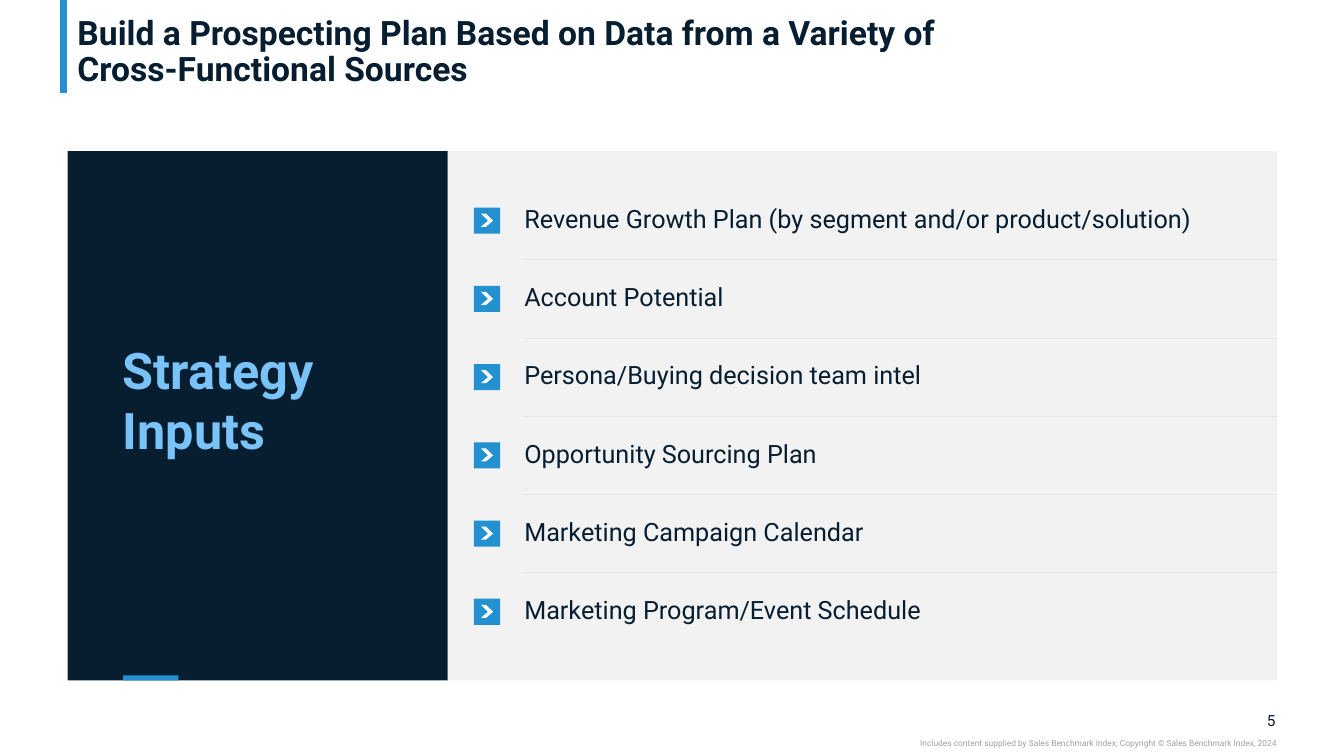
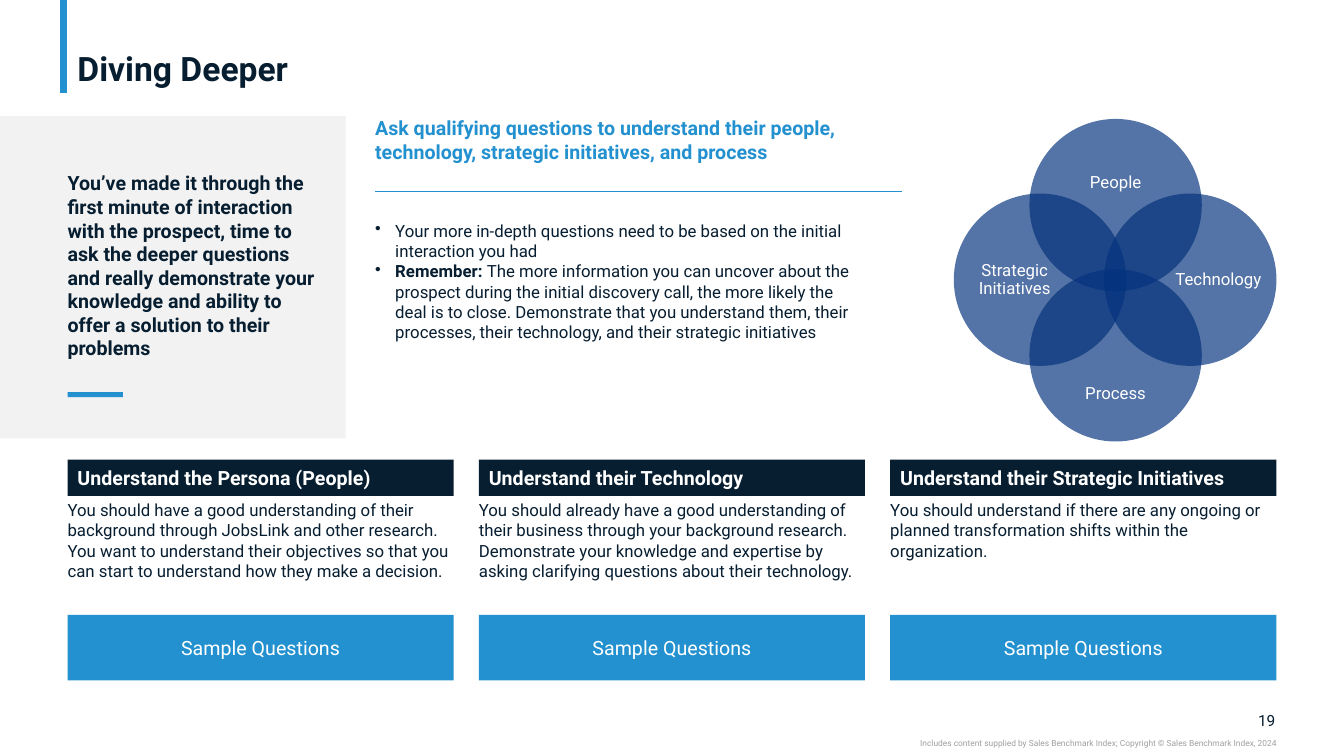
import lxml.etree
import pptx
import pptx.dml.color
import pptx.enum.shapes
import pptx.enum.text
import pptx.oxml.ns
import pptx.util

Inches = pptx.util.Inches
Pt = pptx.util.Pt
Align = pptx.enum.text.PP_ALIGN
Anchor = pptx.enum.text.MSO_ANCHOR
Shape = pptx.enum.shapes.MSO_SHAPE
qn = pptx.oxml.ns.qn

COLORS = {
    "navy": "071E31",
    "blue": "2391CF",
    "sky": "7AC3F8",
    "royal": "03327C",
    "panel": "F2F2F2",
    "rule": "E7E6E6",
    "muted": "A0A0A0",
    "white": "FFFFFF",
}
FONT = "Roboto"
LEFT = 0.67
RIGHT = 12.66
COPYRIGHT = (
    "Includes content supplied by Sales Benchmark Index; "
    "Copyright © Sales Benchmark Index, 2024"
)


def rgb(name):
    return pptx.dml.color.RGBColor.from_string(COLORS[name])


class Deck:
    def __init__(self):
        self.presentation = pptx.Presentation()
        self.presentation.slide_width = Inches(13.33)
        self.presentation.slide_height = Inches(7.5)
        self.page = None

    def add_page(self, title, number):
        layout = self.presentation.slide_layouts[6]
        self.page = self.presentation.slides.add_slide(layout)
        self.line(0.63, 0, 0.63, 0.92, "blue", 5)
        self.text(title, LEFT, 0.04, 11.99, 0.84, 24, bold=True,
                  anchor=Anchor.BOTTOM, inset=0.1, spacing=0.9)
        self.text(number, 12.32, 7.05, 0.33, 0.19, 11,
                  align=Align.RIGHT, anchor=Anchor.MIDDLE)
        self.text(COPYRIGHT, 7.5, 7.32, 5.16, 0.1, 6, "muted",
                  align=Align.RIGHT)

    def line(self, x1, y1, x2, y2, color, width):
        connector = self.page.shapes.add_connector(
            pptx.enum.shapes.MSO_CONNECTOR.STRAIGHT,
            Inches(x1), Inches(y1), Inches(x2), Inches(y2))
        connector.line.color.rgb = rgb(color)
        connector.line.width = Pt(width)
        lxml.etree.SubElement(connector._element.spPr, qn("a:effectLst"))

    def paint(self, shape, color):
        shape.shadow.inherit = False
        shape.fill.solid()
        shape.fill.fore_color.rgb = rgb(color)
        shape.line.fill.background()

    def shape(self, left, top, width, height, color, kind=Shape.RECTANGLE,
              opacity=None):
        shape = self.page.shapes.add_shape(
            kind, Inches(left), Inches(top), Inches(width), Inches(height))
        self.paint(shape, color)
        if opacity is not None:
            tint = shape._element.spPr.find(".//" + qn("a:srgbClr"))
            alpha = lxml.etree.SubElement(tint, qn("a:alpha"))
            alpha.set("val", str(opacity * 1000))
        return shape

    def chevron(self, left, top):
        points = [(0.07, 0.06), (0.12, 0.06), (0.19, 0.13),
                  (0.12, 0.19), (0.07, 0.19), (0.14, 0.13)]
        corners = [(Inches(left + x), Inches(top + y)) for x, y in points]
        builder = self.page.shapes.build_freeform(*corners[0])
        builder.add_line_segments(corners[1:], close=True)
        self.paint(builder.convert_to_shape(), "white")

    def set_frame(self, shape, anchor, inset):
        frame = shape.text_frame
        frame.word_wrap = True
        frame.vertical_anchor = anchor
        frame.margin_left = frame.margin_right = Inches(inset)
        frame.margin_top = frame.margin_bottom = 0
        return frame

    def style(self, para, size, color, bold=False):
        for span in para.runs:
            span.font.name = FONT
            span.font.size = Pt(size)
            span.font.bold = bold
            span.font.color.rgb = rgb(color)

    def text_box(self, left, top, width, height):
        return self.page.shapes.add_textbox(
            Inches(left), Inches(top), Inches(width), Inches(height))

    def text(self, words, left, top, width, height, size, color="navy",
             bold=False, align=Align.LEFT, anchor=Anchor.TOP, inset=0,
             spacing=1.0):
        box = self.text_box(left, top, width, height)
        para = self.set_frame(box, anchor, inset).paragraphs[0]
        para.text = words
        para.alignment = align
        para.line_spacing = spacing
        self.style(para, size, color, bold)

    def banner(self, words, left, top, width, height, color):
        shape = self.shape(left, top, width, height, color)
        para = self.set_frame(shape, Anchor.MIDDLE, 0.1).paragraphs[0]
        para.text = words
        para.alignment = Align.LEFT
        self.style(para, 14, "white", True)

    def bullets(self, items, left, top, width, height, size):
        frame = self.set_frame(
            self.text_box(left, top, width, height), Anchor.TOP, 0)
        for index, (lead, words) in enumerate(items):
            para = frame.add_paragraph() if index else frame.paragraphs[0]
            properties = para._p.get_or_add_pPr()
            properties.set("marL", str(Inches(0.2)))
            properties.set("indent", str(-Inches(0.2)))
            mark = lxml.etree.SubElement(properties, qn("a:buChar"))
            mark.set("char", "•")
            para.text = lead or words
            if lead:
                para.add_run().text = words
            self.style(para, size, "navy")
            para.runs[0].font.bold = bool(lead)


def add_inputs_page(deck):
    deck.add_page("Build a Prospecting Plan Based on Data from a Variety of\n"
                  "Cross-Functional Sources", "5")
    deck.shape(4.44, 1.5, 8.23, 5.25, "panel")
    deck.shape(LEFT, 1.5, 3.77, 5.25, "navy")
    deck.text("Strategy Inputs", 1.22, 3.36, 2.66, 1.21, 36, "sky", bold=True)
    deck.shape(1.22, 6.7, 0.55, 0.05, "blue")

    inputs = [
        "Revenue Growth Plan (by segment and/or product/solution)",
        "Account Potential",
        "Persona/Buying decision team intel",
        "Opportunity Sourcing Plan",
        "Marketing Campaign Calendar",
        "Marketing Program/Event Schedule",
    ]
    pitch = 3.88 / (len(inputs) - 1)
    for row, words in enumerate(inputs):
        top = 2.05 + row * pitch
        deck.text(words, 5.2, top, 7.45, 0.27, 18,
                  anchor=Anchor.MIDDLE, spacing=0.9)
        deck.shape(4.7, top + 0.01, 0.26, 0.26, "blue")
        deck.chevron(4.7, top + 0.01)
        if row:
            rule = top - 0.25
            deck.line(5.2, rule, RIGHT, rule, "rule", 0.5)


def add_deeper_page(deck):
    deck.add_page("Diving Deeper", "19")
    deck.shape(0, 1.15, 3.43, 3.2, "panel")
    deck.text("You’ve made it through the first minute of interaction with "
              "the prospect, time to ask the deeper questions and really "
              "demonstrate your knowledge and ability to offer a solution to "
              "their problems", LEFT, 1.7, 2.49, 1.88, 14, bold=True)
    deck.shape(LEFT, 3.89, 0.55, 0.05, "blue")

    deck.text("Ask qualifying questions to understand their people, "
              "technology, strategic initiatives, and process",
              3.72, 1.15, 5.22, 0.47, 14, "blue", bold=True,
              anchor=Anchor.MIDDLE)
    deck.line(3.72, 1.9, 8.95, 1.9, "blue", 0.5)
    deck.bullets([
        ("", "Your more in-depth questions need to be based on the initial "
             "interaction you had"),
        ("Remember: ",
         "The more information you can uncover about the prospect during the "
         "initial discovery call, the more likely the deal is to close. "
         "Demonstrate that you understand them, their processes, their "
         "technology, and their strategic initiatives"),
    ], 3.72, 2.19, 4.71, 1.41, 12)

    for left, top in [(10.21, 1.18), (10.21, 2.67),
                      (10.95, 1.92), (9.46, 1.92)]:
        deck.shape(left, top, 1.71, 1.71, "royal", Shape.OVAL, opacity=68)
    for words, left, top, height in [
        ("Strategic Initiatives", 9.6, 2.6, 0.36),
        ("Process", 10.6, 3.82, 0.18),
        ("Technology", 11.62, 2.69, 0.18),
        ("People", 10.6, 1.73, 0.18),
    ]:
        deck.text(words, left, top, 0.93, height, 12, "white",
                  align=Align.CENTER, anchor=Anchor.MIDDLE, spacing=0.9)

    topics = [
        ("Understand the Persona (People)",
         "You should have a good understanding of their background through "
         "JobsLink and other research. You want to understand their "
         "objectives so that you can start to understand how they make a "
         "decision."),
        ("Understand their Technology",
         "You should already have a good understanding of their business "
         "through your background research. Demonstrate your knowledge and "
         "expertise by asking clarifying questions about their technology."),
        ("Understand their Strategic Initiatives",
         "You should understand if there are any ongoing or planned "
         "transformation shifts within the organization."),
    ]
    width = 3.83
    pitch = (RIGHT - LEFT - width) / (len(topics) - 1)
    for column, (heading, words) in enumerate(topics):
        left = LEFT + column * pitch
        deck.banner(heading, left, 4.56, width, 0.36, "navy")
        deck.text(words, left, 4.96, width, 1.01, 12)
        deck.shape(left, 6.1, width, 0.65, "blue")
        deck.text("Sample Questions", left + 0.26, 6.31, 3.31, 0.24, 14,
                  "white", align=Align.CENTER, anchor=Anchor.MIDDLE)


def main():
    deck = Deck()
    add_inputs_page(deck)
    add_deeper_page(deck)
    deck.presentation.save("out.pptx")


if __name__ == "__main__":
    main()
